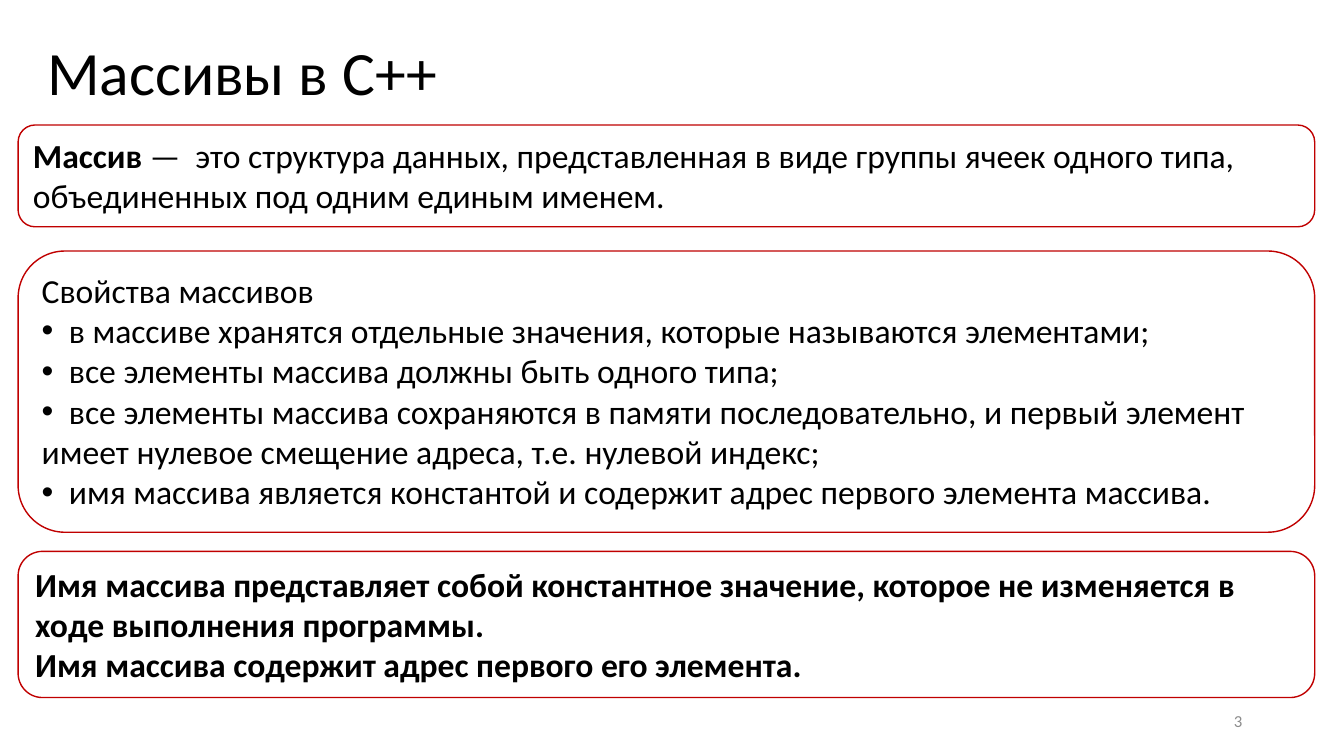
"""Build the slide on arrays in C++."""
from dataclasses import dataclass
from typing import Optional

from lxml.etree import SubElement
from pptx import Presentation
from pptx.dml.color import RGBColor
from pptx.enum.shapes import MSO_SHAPE as Preset
from pptx.enum.text import MSO_ANCHOR as Anchor, MSO_AUTO_SIZE as AutoSize, PP_ALIGN as Align
from pptx.oxml.ns import qn
from pptx.slide import Slide
from pptx.text.text import TextFrame
from pptx.util import Inches, Pt

BLACK = RGBColor(0x00, 0x00, 0x00)
WHITE = RGBColor(0xFF, 0xFF, 0xFF)
RED = RGBColor(0xC0, 0x00, 0x00)
GRAY = RGBColor(0x8C, 0x8C, 0x8C)

PANEL_LEFT, PANEL_WIDTH = 0.18, 12.86
BULLET_GAP = 0.27


@dataclass(frozen=True)
class Line:
    text: str
    lead: str = ""
    bold: bool = False
    bullet: bool = False


@dataclass(frozen=True)
class Panel:
    top: float
    height: float
    lines: tuple[Line, ...]


@dataclass(frozen=True)
class Label:
    text: str
    left: float
    top: float
    width: float
    height: float
    size: int
    color: RGBColor
    align: Align = Align.LEFT
    spacing: Optional[float] = None


PANELS = (
    Panel(1.24, 1.01, (
        Line(" —  это структура данных, представленная в виде группы ячеек одного типа, "
             "объединенных под одним единым именем.", lead="Массив"),
    )),
    Panel(2.49, 2.79, (
        Line("Свойства массивов"),
        Line("в массиве хранятся отдельные значения, которые называются элементами;", bullet=True),
        Line("все элементы массива должны быть одного типа;", bullet=True),
        Line("все элементы массива сохраняются в памяти последовательно, и первый элемент "
             "имеет нулевое смещение адреса, т.е. нулевой индекс;", bullet=True),
        Line("имя массива является константой и содержит адрес первого элемента массива.",
             bullet=True),
    )),
    Panel(5.47, 1.45, (
        Line("Имя массива представляет собой константное значение, которое не изменяется в "
             "ходе выполнения программы.", bold=True),
        Line("Имя массива содержит адрес первого его элемента.", bold=True),
    )),
)

LABELS = (
    Label("Массивы в C++", 0.37, 0.25, 12.67, 1, 44, BLACK, spacing=0.9),
    Label("3", 9.42, 6.95, 3, 0.4, 12, GRAY, align=Align.RIGHT),
)


def apply_format(target: object, values: dict[str, object]) -> None:
    for attribute, value in values.items():
        setattr(target, attribute, value)


def add_words(paragraph, text: str, size: int, color: RGBColor, bold: bool = False) -> None:
    run = paragraph.add_run()
    run.text = text
    apply_format(run.font, {"name": "Calibri", "size": Pt(size), "bold": bold})
    run.font.color.rgb = color


def add_bullet(paragraph) -> None:
    properties = paragraph._p.get_or_add_pPr()
    apply_indent = {"marL": "0", "indent": "0"}
    for attribute, value in apply_indent.items():
        properties.set(attribute, value)
    SubElement(properties, qn("a:buFont"), typeface="Arial")
    SubElement(properties, qn("a:buChar"), char="•")
    stops = SubElement(properties, qn("a:tabLst"))
    SubElement(stops, qn("a:tab"), pos=str(Inches(BULLET_GAP)), algn="l")


def write_lines(frame: TextFrame, lines: tuple[Line, ...]) -> None:
    for index, line in enumerate(lines):
        paragraph = frame.add_paragraph() if index else frame.paragraphs[0]
        paragraph.alignment = Align.LEFT
        if line.bullet:
            add_bullet(paragraph)
        if line.lead:
            add_words(paragraph, line.lead, 24, BLACK, bold=True)
        text = f"\t{line.text}" if line.bullet else line.text
        add_words(paragraph, text, 24, BLACK, line.bold)


def draw_panel(slide: Slide, panel: Panel) -> None:
    outline = slide.shapes.add_shape(
        Preset.ROUNDED_RECTANGLE, Inches(PANEL_LEFT), Inches(panel.top),
        Inches(PANEL_WIDTH), Inches(panel.height))
    outline.shadow.inherit = False
    outline.fill.solid()
    outline.fill.fore_color.rgb = WHITE
    outline.line.color.rgb = RED
    outline.line.width = Pt(1)
    apply_format(outline.text_frame, {
        "word_wrap": True, "vertical_anchor": Anchor.TOP,
        "auto_size": AutoSize.SHAPE_TO_FIT_TEXT})
    write_lines(outline.text_frame, panel.lines)


def draw_label(slide: Slide, label: Label) -> None:
    frame = slide.shapes.add_textbox(
        Inches(label.left), Inches(label.top),
        Inches(label.width), Inches(label.height)).text_frame
    apply_format(frame, {"word_wrap": True, "vertical_anchor": Anchor.MIDDLE})
    paragraph = frame.paragraphs[0]
    apply_format(paragraph, {"alignment": label.align, "line_spacing": label.spacing})
    add_words(paragraph, label.text, label.size, label.color)


def main() -> None:
    deck = Presentation()
    apply_format(deck, {"slide_width": Inches(13.33), "slide_height": Inches(7.5)})
    slide = deck.slides.add_slide(deck.slide_layouts[6])
    for panel in PANELS:
        draw_panel(slide, panel)
    for label in LABELS:
        draw_label(slide, label)
    deck.save("out.pptx")


if __name__ == "__main__":
    main()
